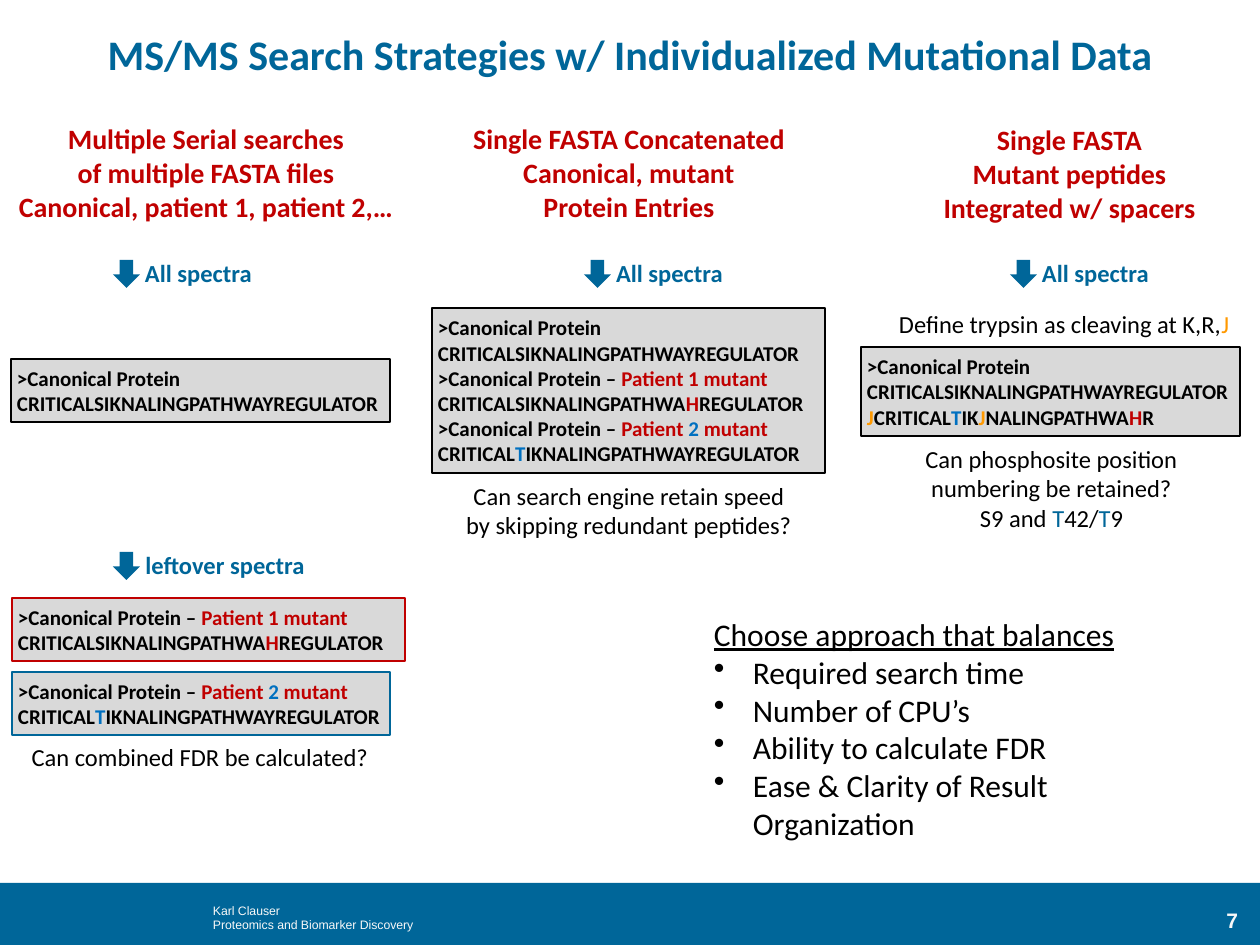
import pptx
import pptx.util
import pptx.dml.color
import pptx.enum.shapes
import pptx.enum.text
import pptx.oxml.ns
from lxml import etree

PX = 914400 / 126
BLUE, RED, BLACK, PALE = "006699", "C00000", "000000", "F8F8F8"
TINTS = {"k": BLACK, "r": RED, "b": "0070C0", "t": BLUE, "o": "FF9900"}
KIND = pptx.enum.shapes.MSO_SHAPE
ALIGN = pptx.enum.text.PP_ALIGN
FIT = pptx.enum.text.MSO_AUTO_SIZE

BASE = [">Canonical Protein", "CRITICALSIKNALINGPATHWAYREGULATOR"]
FIRST = [">Canonical Protein – |rPatient 1 mutant",
         "CRITICALSIKNALINGPATHWA|rH|kREGULATOR"]
SECOND = [">Canonical Protein – |rPatient |b2|r mutant",
          "CRITICAL|bT|kIKNALINGPATHWAYREGULATOR"]
JOINED = ["|oJ|kCRITICAL|bT|kIK|oJ|kNALINGPATHWA|rH|kR"]


def emu(*sizes):
    return [pptx.util.Emu(round(size * PX)) for size in sizes]


def color(code):
    return pptx.dml.color.RGBColor.from_string(code)


def shape(slide, kind, box, fill, line=None):
    item = slide.shapes.add_shape(kind, *emu(*box))
    item.shadow.inherit = False
    item.fill.solid()
    item.fill.fore_color.rgb = color(fill)
    if line:
        item.line.color.rgb = color(line)
        item.line.width = pptx.util.Pt(1.5)
    else:
        item.line.fill.background()
    return item


def bullet(para):
    props = para._p.get_or_add_pPr()
    shift = emu(39)[0]
    props.set("marL", str(shift))
    props.set("indent", str(-shift))
    mark = etree.SubElement(props, pptx.oxml.ns.qn("a:buChar"))
    mark.set("char", "•")


def write(item, lines, size, ink=BLACK, bold=False, align=ALIGN.LEFT,
          face="Calibri", wrap=False, inset=(6, 6), fit=True, dots=False):
    """Fill a shape with lines, where a bar and a letter switch the tint."""
    frame = item.text_frame
    frame.word_wrap = wrap
    frame.auto_size = FIT.SHAPE_TO_FIT_TEXT if fit else FIT.NONE
    frame.margin_left, frame.margin_top = emu(*inset)
    frame.margin_right, frame.margin_bottom = emu(*inset)
    for row, line in enumerate(lines):
        para = frame.add_paragraph() if row else frame.paragraphs[0]
        if dots and row:
            bullet(para)
        para.alignment = align
        font = para.font
        font.name, font.size, font.bold = face, pptx.util.Pt(size), bold
        font.color.rgb = color(ink)
        head, *parts = line.split("|")
        if head:
            para.add_run().text = head
        for part in parts:
            run = para.add_run()
            run.text = part[1:]
            run.font.color.rgb = color(TINTS[part[0]])
    return frame


def label(slide, box, lines, size, **look):
    return write(slide.shapes.add_textbox(*emu(*box)), lines, size, **look)


def entry(slide, box, lines, line=BLACK):
    item = shape(slide, KIND.RECTANGLE, box, "D9D9D9", line)
    write(item, lines, 12, bold=True)


def step(slide, left, top, width, text):
    shape(slide, KIND.DOWN_ARROW, (left, top, 27, 28), BLUE)
    label(slide, (left + 25, top - 8, width, 43), [text], 14, ink=BLUE,
          bold=True, align=ALIGN.CENTER)


def note(slide, box, lines, wrap=False):
    label(slide, box, lines, 14, align=ALIGN.CENTER, wrap=wrap)


def footer(slide):
    shape(slide, KIND.RECTANGLE, (0, 883, 1260, 62), BLUE)
    look = dict(ink=PALE, face="Arial", wrap=True, inset=(13, 6), fit=False)
    label(slide, (200, 897, 250, 34),
          ["Karl Clauser", "Proteomics and Biomarker Discovery"], 7, **look)
    label(slide, (1164, 902, 87, 32), ["7"], 12, bold=True,
          align=ALIGN.RIGHT, **look)


def main():
    deck = pptx.Presentation()
    deck.slide_width, deck.slide_height = emu(1260, 945)
    slide = deck.slides.add_slide(deck.slide_layouts[6])
    footer(slide)
    title = label(slide, (17, 18, 1226, 71),
                  ["MS/MS Search Strategies w/ Individualized Mutational Data"],
                  24, ink=BLUE, bold=True, align=ALIGN.CENTER, wrap=True, fit=False)
    title.vertical_anchor = pptx.enum.text.MSO_ANCHOR.MIDDLE

    heads = [
        ((10, 116, 392, 115), ["Multiple Serial searches", "of multiple FASTA files",
                               "Canonical, patient 1, patient 2,…"]),
        ((458, 116, 342, 115), ["Single FASTA Concatenated", "Canonical, mutant",
                                "Protein Entries"]),
        ((936, 117, 267, 115), ["Single FASTA", "Mutant peptides",
                                "Integrated w/ spacers"]),
    ]
    for box, lines in heads:
        label(slide, box, lines, 16, ink=RED, bold=True, align=ALIGN.CENTER)

    for left in (113, 584, 1010):
        step(slide, left, 260, 121, "All spectra")
    step(slide, 113, 552, 174, "leftover spectra")

    entry(slide, (11, 359, 379, 63), BASE)
    entry(slide, (12, 598, 393, 63), FIRST, RED)
    entry(slide, (12, 672, 378, 63), SECOND, BLUE)
    entry(slide, (432, 308, 393, 165), BASE + FIRST + SECOND)
    entry(slide, (861, 347, 379, 89), BASE + JOINED)

    note(slide, (879, 303, 370, 43), ["Define trypsin as cleaving at K,R,|oJ"], True)
    note(slide, (458, 475, 342, 72),
         ["Can search engine retain speed", "by skipping redundant peptides?"])
    note(slide, (24, 736, 352, 43), ["Can combined FDR be calculated?"])
    note(slide, (918, 438, 267, 102),
         ["Can phosphosite position", "numbering be retained?",
          "S9 and |tT|k42/|tT|k9"])

    goals = label(slide, (708, 609, 426, 242),
                  ["Choose approach that balances", "Required search time",
                   "Number of CPU’s", "Ability to calculate FDR",
                   "Ease & Clarity of Result Organization"],
                  18, wrap=True, dots=True)
    goals.paragraphs[0].font.underline = True
    deck.save("out.pptx")


if __name__ == "__main__":
    main()
